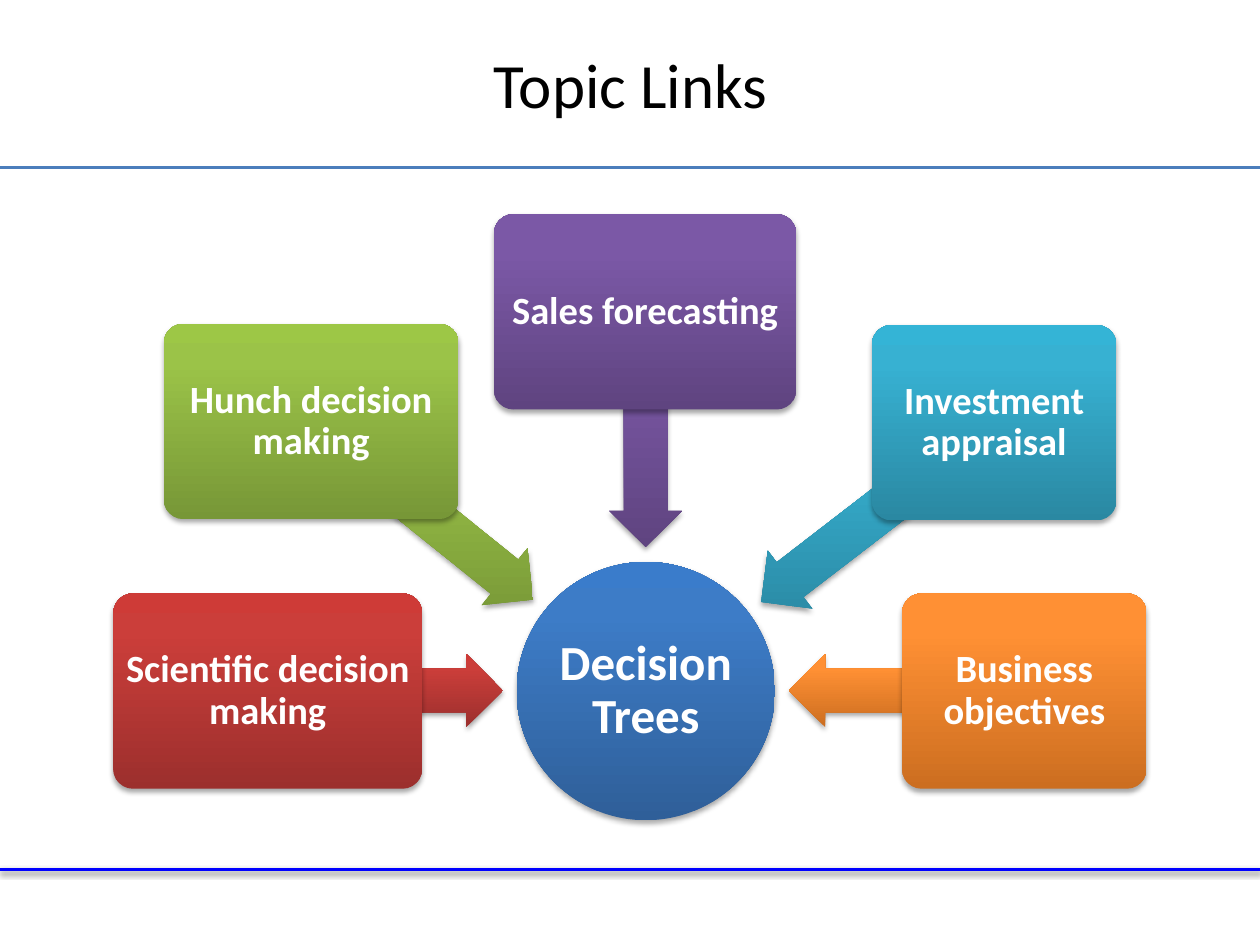
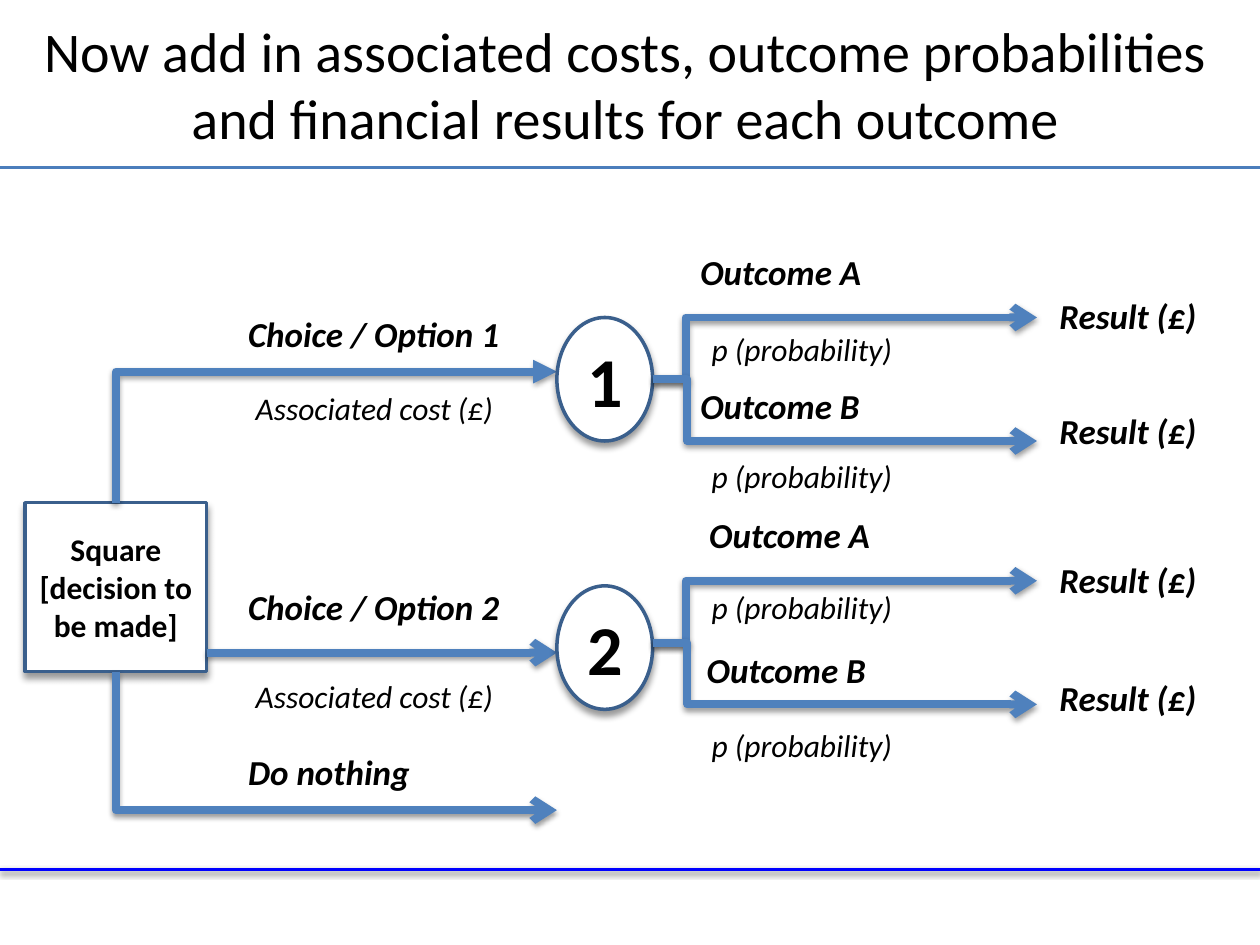
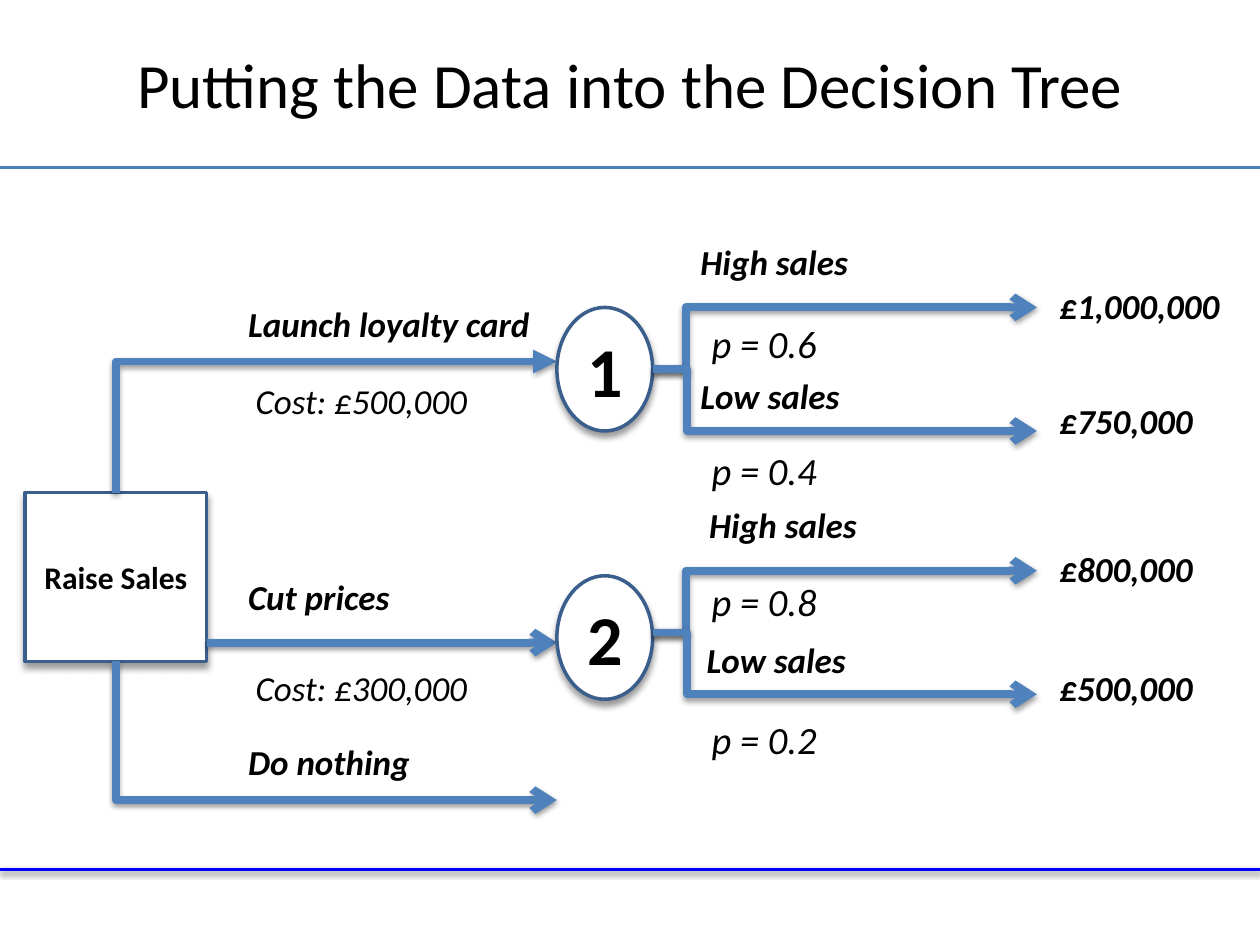
from dataclasses import dataclass

from lxml.etree import SubElement
from pptx import Presentation
from pptx.dml.color import RGBColor
from pptx.enum.shapes import MSO_CONNECTOR as Link, MSO_SHAPE as Preset
from pptx.enum.text import MSO_ANCHOR as Anchor, MSO_AUTO_SIZE as AutoSize, PP_ALIGN as Align
from pptx.oxml.ns import qn
from pptx.util import Inches, Pt


@dataclass(frozen=True)
class Theme:
    """Colours, type sizes and shadows of the deck."""
    font: str = "Calibri"
    ink: str = "000000"
    paper: str = "FFFFFF"
    rule: str = "4B7EBC"
    footer: str = "0000FF"
    arrow: str = "4F81BD"
    outline: str = "3A5F8C"
    blue: tuple = ("2F5F99", "3D7CC7", "3A7CCB")
    red: tuple = ("9C2F2D", "CB3E3A", "CE3B37")
    green: tuple = ("779737", "9BC348", "9DC746")
    purple: tuple = ("5F4480", "7B58A6", "7C57A8")
    teal: tuple = ("2A88A2", "37B1D2", "34B4D6")
    orange: tuple = ("CC6E20", "FF9034", "FF9136")
    title: int = 36
    long_title: int = 32
    hub: int = 28
    card: int = 22
    label: int = 20
    detail: int = 18
    number: int = 40
    line_shadow: tuple = (38, 3.1, 1.6)
    card_shadow: tuple = (35, 3.1, 1.8)
    node_shadow: tuple = (40, 4, 3)


THEME = Theme()


def rgb(code):
    """Turn a hex code into a colour."""
    return RGBColor.from_string(code)


def cast_shadow(effects, shadow):
    """Add a downward shadow given as opacity, blur and distance."""
    opacity, blur, distance = shadow
    outer = SubElement(effects, qn("a:outerShdw"), blurRad=str(Pt(blur)), dist=str(Pt(distance)),
                       dir="5400000", rotWithShape="0")
    color = SubElement(outer, qn("a:srgbClr"), val=THEME.ink)
    SubElement(color, qn("a:alpha"), val=str(opacity * 1000))


def write(box, text, size=THEME.label, color=THEME.ink, bold=False, italic=False,
          align=Align.LEFT, anchor=Anchor.TOP, spacing=None, inset=(0.1, 0.05)):
    """Fill a box with text, one paragraph for each line."""
    frame = box.text_frame
    frame.word_wrap = True
    frame.vertical_anchor = anchor
    frame.margin_left = frame.margin_right = Inches(inset[0])
    frame.margin_top = frame.margin_bottom = Inches(inset[1])
    for index, line in enumerate(text.split("\n")):
        para = frame.add_paragraph() if index else frame.paragraphs[0]
        para.alignment = align
        para.line_spacing = spacing
        span = para.add_run()
        span.text = line
        span.font.name, span.font.size = THEME.font, Pt(size)
        span.font.bold, span.font.italic = bold, italic
        span.font.color.rgb = rgb(color)


def add_label(page, text, left, top, width, **style):
    """Add a text box that grows with its text."""
    height = 0.1 + style.get("size", THEME.label) * 0.017
    box = page.shapes.add_textbox(Inches(left), Inches(top), Inches(width), Inches(height))
    write(box, text, italic=True, **style)
    box.text_frame.auto_size = AutoSize.SHAPE_TO_FIT_TEXT


def add_line(page, start, end, color=THEME.arrow, weight=4.5, tip=None,
             shadow=THEME.line_shadow, kind=Link.STRAIGHT):
    """Add a connector with an optional arrow tip and shadow."""
    line = page.shapes.add_connector(kind, *(Inches(value) for value in (*start, *end)))
    line.line.color.rgb = rgb(color)
    line.line.width = Pt(weight)
    properties = line._element.spPr
    if tip:
        SubElement(properties.find(qn("a:ln")), qn("a:tailEnd"), type=tip)
    effects = SubElement(properties, qn("a:effectLst"))
    if shadow:
        cast_shadow(effects, shadow)
    return line


def add_step(page, start, end, bend):
    """Add an arrow that steps up or down at a share of its width."""
    line = add_line(page, start, end, tip="arrow", kind=Link.ELBOW)
    guides = line._element.spPr.find(qn("a:prstGeom")).get_or_add_avLst()
    SubElement(guides, qn("a:gd"), name="adj1", fmla=f"val {round(bend * 100000)}")


def add_corner(page, box, site, start, end, tip):
    """Add an arrow that leaves a box vertically and turns right."""
    line = add_line(page, start, end, tip=tip, kind=Link.ELBOW)
    line.begin_connect(box, site)
    run, rise = end[0] - start[0], abs(end[1] - start[1])
    line.left = Inches((start[0] + end[0] - rise) / 2)
    line.top = Inches((start[1] + end[1] - run) / 2)
    line.width, line.height = Inches(rise), Inches(run)
    upward = end[1] < start[1]
    properties = line._element.spPr
    properties.find(qn("a:prstGeom")).set("prst", "bentConnector2")
    turn = properties.find(qn("a:xfrm"))
    turn.set("rot", str((90 if upward else 270) * 60000))
    turn.set("flipH", "1")
    turn.set("flipV", "1" if upward else "0")


def add_shape(page, preset, left, top, width, height):
    """Add a preset shape without its default shadow."""
    shape = page.shapes.add_shape(preset, Inches(left), Inches(top), Inches(width), Inches(height))
    shape.shadow.inherit = False
    return shape


def add_glossy(page, preset, left, top, width, height, colors, adjustments=(), rotation=0):
    """Add a shape shaded from dark at the bottom to light at the top."""
    shape = add_shape(page, preset, left, top, width, height)
    for index, value in enumerate(adjustments):
        shape.adjustments[index] = value
    shape.rotation = rotation
    shape.line.fill.background()
    shape.fill.gradient()
    shape.fill.gradient_angle = 90
    properties = shape._element.spPr
    gradient = properties.find(qn("a:gradFill"))
    gradient.set("rotWithShape", "0")
    stops = gradient.find(qn("a:gsLst"))
    for stop in list(stops):
        stops.remove(stop)
    for position, color in zip((0, 80, 100), colors):
        stop = SubElement(stops, qn("a:gs"), pos=str(position * 1000))
        SubElement(stop, qn("a:srgbClr"), val=color)
    cast_shadow(properties.find(qn("a:effectLst")), THEME.card_shadow)
    return shape


def add_node(page, preset, left, top, width, height, text, **style):
    """Add an outlined white node of the decision tree."""
    node = add_shape(page, preset, left, top, width, height)
    node.fill.solid()
    node.fill.fore_color.rgb = rgb(THEME.paper)
    node.line.color.rgb = rgb(THEME.outline)
    node.line.width = Pt(2)
    cast_shadow(node._element.spPr.find(qn("a:effectLst")), THEME.node_shadow)
    write(node, text, bold=True, align=Align.CENTER, anchor=Anchor.MIDDLE, **style)
    return node


def add_page(deck, title, left, width, size=THEME.title):
    """Add a slide with its title and the two rules."""
    page = deck.slides.add_slide(deck.slide_layouts[6])
    add_line(page, (0, 6.9), (10, 6.9), color=THEME.footer, weight=2)
    add_line(page, (0, 1.33), (10, 1.33), color=THEME.rule, weight=1.75, shadow=None)
    box = page.shapes.add_textbox(Inches(left), Inches(0.08), Inches(width), Inches(1.17))
    write(box, title, size=size, align=Align.CENTER, anchor=Anchor.MIDDLE)
    return page


def draw_links(page, left, top):
    """Draw the topic cards pointing at the central hub."""
    cards = (
        ("Scientific decision making", 0, 3.01, 2.45, THEME.red, (1.22, 3.49, 1.87, 180)),
        ("Hunch decision making", 0.4, 0.87, 2.34, THEME.green, (1.32, 2.06, 2.26, 218.8)),
        ("Sales forecasting", 3.02, 0, 2.4, THEME.purple, (3.29, 1.42, 1.87, 270)),
        ("Investment appraisal", 6.02, 0.88, 1.94, THEME.teal, (4.9, 2.08, 2.32, 322.4)),
        ("Business objectives", 6.26, 3.01, 1.94, THEME.orange, (5.36, 3.49, 1.87, 0)),
    )
    style = dict(color=THEME.paper, bold=True, align=Align.CENTER, anchor=Anchor.MIDDLE, spacing=0.9)
    hub = add_glossy(page, Preset.OVAL, left + 3.2, top + 2.76, 2.05, 2.05, THEME.blue)
    write(hub, "Decision Trees", size=THEME.hub, inset=(0.02, 0.02), **style)
    for text, dx, dy, width, colors, (arrow_dx, arrow_dy, length, rotation) in cards:
        add_glossy(page, Preset.LEFT_ARROW, left + arrow_dx, top + arrow_dy, length, 0.58,
                   colors, (0.6, 0.5), rotation)
        card = add_glossy(page, Preset.ROUNDED_RECTANGLE, left + dx, top + dy, width, 1.55,
                          colors, (0.1,))
        write(card, text, size=THEME.card, inset=(0.05, 0.05), **style)


def draw_tree(page, left, top, decision, options, costs, outcomes,
              cost_size=THEME.label, chance_size=THEME.card):
    """Draw a decision with three options, two of them with two outcomes each."""
    middle, tip = left + 0.72, left + 4.22
    box = add_node(page, Preset.RECTANGLE, left, top + 2.05, 1.44, 1.34, decision, size=THEME.detail)
    add_corner(page, box, 0, (middle, top + 2.05), (tip, top + 1.01), "triangle")
    add_line(page, (left + 1.44, top + 3.24), (tip, top + 3.24), tip="arrow")
    add_corner(page, box, 2, (middle, top + 3.39), (tip, top + 4.49), "arrow")
    for option, dy in zip(options, (0.49, 2.66, 3.97)):
        add_label(page, option, left + 1.67, top + dy, 2.51, bold=True)
    for cost, dy in zip(costs, (1.1, 3.38)):
        add_label(page, cost, left + 1.73, top + dy, 2.28, size=cost_size)
    for number, node_dy, fork_dy in (("1", 0.58, 1.07), ("2", 2.71, 3.16)):
        add_node(page, Preset.OVAL, tip, top + node_dy, 0.76, 0.98, number,
                 size=THEME.number, inset=(0.1, 0))
        for rise, bend in ((-0.49, 0.086), (0.49, 0.09)):
            fork = top + fork_dy
            add_step(page, (left + 4.98, fork), (left + 8.03, fork + rise), bend)
    rows = ((5.26, 0, 0.63, 0.35), (5.26, 1.06, 1.64, 1.26),
            (5.33, 2.09, 2.68, 2.44), (5.31, 3.16, 3.77, 3.38))
    for (outcome, chance, result), (dx, outcome_dy, chance_dy, result_dy) in zip(outcomes, rows):
        add_label(page, outcome, left + dx, top + outcome_dy, 2.51, bold=True)
        add_label(page, chance, left + 5.35, top + chance_dy, 2.28, size=chance_size)
        add_label(page, result, left + 8.11, top + result_dy, 1.54, bold=True)


def main():
    """Build the deck and save it."""
    deck = Presentation()
    deck.slide_width, deck.slide_height = Inches(10), Inches(7.5)

    page = add_page(deck, "Topic Links", 0.2, 9.61)
    draw_links(page, 0.9, 1.7)

    page = add_page(deck, "Now add in associated costs, outcome probabilities and financial "
                    "results for each outcome", 0.2, 9.53, THEME.long_title)
    draw_tree(page, 0.2, 1.94, "Square\n[decision to be made]",
              ("Choice / Option 1", "Choice / Option 2", "Do nothing"),
              ("Associated cost (£)",) * 2,
              [(f"Outcome {name}", "p (probability)", "Result (£)") for name in "ABAB"],
              cost_size=THEME.detail, chance_size=THEME.detail)

    page = add_page(deck, "Putting the Data into the Decision Tree", 0.5, 9)
    draw_tree(page, 0.2, 1.86, "Raise Sales",
              ("Launch loyalty card", "Cut prices", "Do nothing"),
              ("Cost: £500,000", "Cost: £300,000"),
              (("High sales", "p = 0.6", "£1,000,000"), ("Low sales", "p = 0.4", "£750,000"),
               ("High sales", "p = 0.8", "£800,000"), ("Low sales", "p = 0.2", "£500,000")))

    deck.save("out.pptx")


if __name__ == "__main__":
    main()
